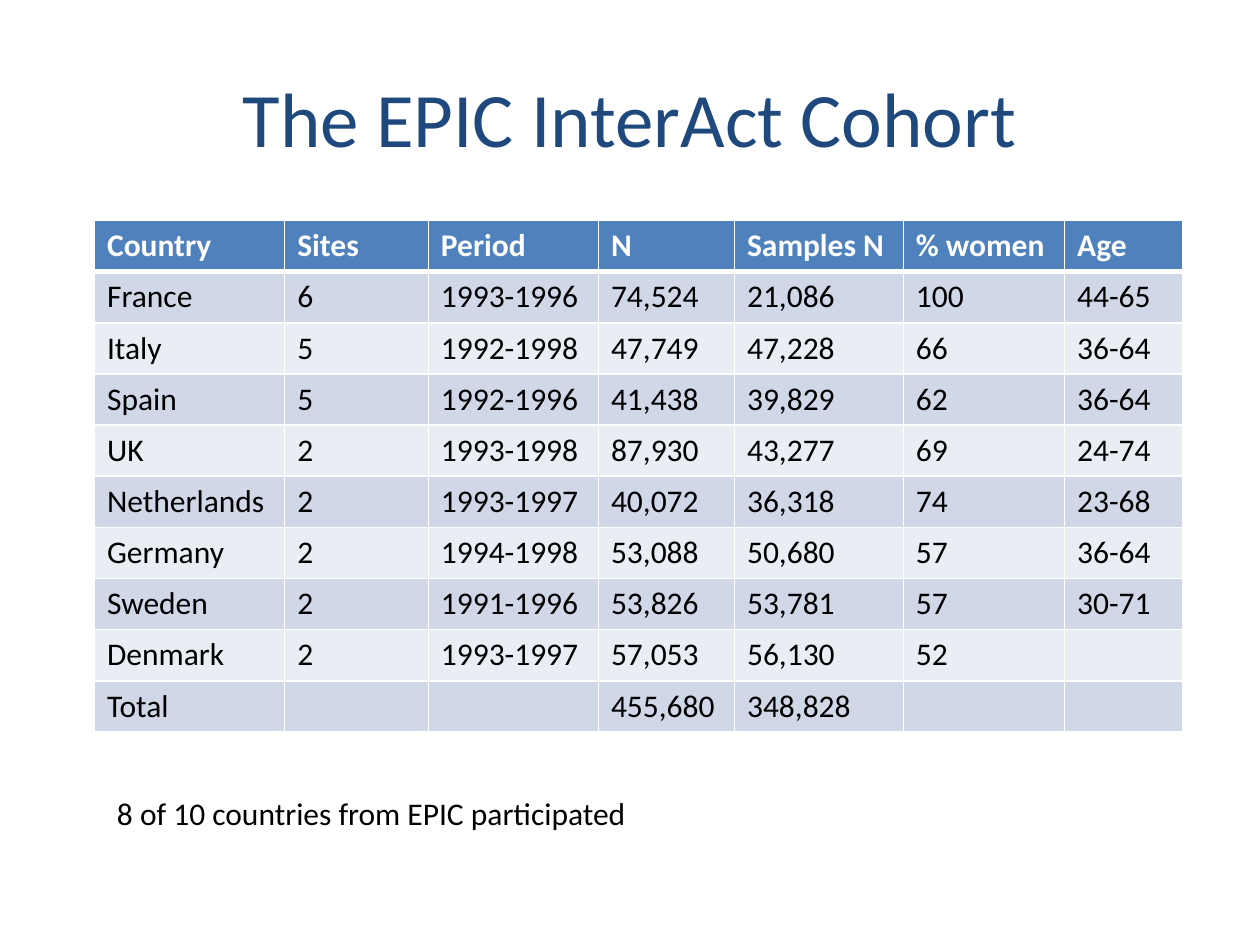
from dataclasses import dataclass

import lxml.etree
import pptx
import pptx.dml.color
import pptx.enum.text
import pptx.oxml.ns
import pptx.util

Inches = pptx.util.Inches
RGBColor = pptx.dml.color.RGBColor

FONT = "Calibri"
NAVY = RGBColor(0x1F, 0x49, 0x7D)
BLUE = RGBColor(0x4F, 0x81, 0xBD)
BAND_DARK = RGBColor(0xD0, 0xD8, 0xE8)
BAND_LIGHT = RGBColor(0xE9, 0xED, 0xF4)
WHITE = RGBColor(0xFF, 0xFF, 0xFF)
BLACK = RGBColor(0x00, 0x00, 0x00)
ROW_HEIGHT = 0.406


@dataclass(frozen=True)
class Column:
    heading: str
    width: float


@dataclass(frozen=True)
class Label:
    text: str
    left: float
    top: float
    width: float
    height: float
    size: int
    color: RGBColor
    align: pptx.enum.text.PP_ALIGN
    anchor: pptx.enum.text.MSO_ANCHOR
    wrap: bool


COLUMNS = (
    Column("Country", 1.51),
    Column("Sites", 1.14),
    Column("Period", 1.35),
    Column("N", 1.08),
    Column("Samples N", 1.34),
    Column("% women", 1.28),
    Column("Age", 0.94),
)
COHORTS = (
    ("France", "6", "1993-1996", "74,524", "21,086", "100", "44-65"),
    ("Italy", "5", "1992-1998", "47,749", "47,228", "66", "36-64"),
    ("Spain", "5", "1992-1996", "41,438", "39,829", "62", "36-64"),
    ("UK", "2", "1993-1998", "87,930", "43,277", "69", "24-74"),
    ("Netherlands", "2", "1993-1997", "40,072", "36,318", "74", "23-68"),
    ("Germany", "2", "1994-1998", "53,088", "50,680", "57", "36-64"),
    ("Sweden", "2", "1991-1996", "53,826", "53,781", "57", "30-71"),
    ("Denmark", "2", "1993-1997", "57,053", "56,130", "52", ""),
    ("Total", "", "", "455,680", "348,828", "", ""),
)
LABELS = (
    Label("The EPIC InterAct Cohort", 0.5, 0.3, 9, 1.25, 44, NAVY,
          pptx.enum.text.PP_ALIGN.CENTER, pptx.enum.text.MSO_ANCHOR.MIDDLE, True),
    Label("8 of 10 countries from EPIC participated", 0.83, 6.25, 4.29, 0.4, 18, BLACK,
          pptx.enum.text.PP_ALIGN.LEFT, pptx.enum.text.MSO_ANCHOR.TOP, False),
)


def format_runs(p, size: int, color: RGBColor, bold: bool = False) -> None:
    for r in p.runs:
        r.font.name = FONT
        r.font.size = pptx.util.Pt(size)
        r.font.bold = bold
        r.font.color.rgb = color


def add_label(slide, label: Label) -> None:
    sp = slide.shapes.add_textbox(Inches(label.left), Inches(label.top),
                                  Inches(label.width), Inches(label.height))
    tf = sp.text_frame
    tf.word_wrap = label.wrap
    tf.vertical_anchor = label.anchor
    tf.text = label.text
    p = tf.paragraphs[0]
    p.alignment = label.align
    format_runs(p, label.size, label.color)


def set_border(cell, side: str, width: int) -> None:
    qn = pptx.oxml.ns.qn
    ln = lxml.etree.SubElement(cell._tc.get_or_add_tcPr(), qn(f"a:ln{side}"),
                               w=str(pptx.util.Pt(width)))
    fill = lxml.etree.SubElement(ln, qn("a:solidFill"))
    lxml.etree.SubElement(fill, qn("a:srgbClr"), val=str(WHITE))


def fill_cell(cell, text: str, row: int) -> None:
    header = row == 0
    widths = {"L": 1, "R": 1, "T": 3 if row == 1 else 1, "B": 3 if header else 1}
    for side, width in widths.items():
        set_border(cell, side, width)
    cell.fill.solid()
    cell.fill.fore_color.rgb = BLUE if header else BAND_DARK if row % 2 else BAND_LIGHT
    cell.text_frame.text = text
    format_runs(cell.text_frame.paragraphs[0], 18, WHITE if header else BLACK, header)


def add_cohort_table(slide, left: float, top: float) -> None:
    rows = (tuple(column.heading for column in COLUMNS), *COHORTS)
    width = sum(column.width for column in COLUMNS)
    table = slide.shapes.add_table(len(rows), len(COLUMNS), Inches(left), Inches(top),
                                   Inches(width), Inches(ROW_HEIGHT * len(rows))).table
    for i, column in enumerate(COLUMNS):
        table.columns[i].width = Inches(column.width)
    for i, values in enumerate(rows):
        table.rows[i].height = Inches(ROW_HEIGHT)
        for j, value in enumerate(values):
            fill_cell(table.cell(i, j), value, i)


def main() -> None:
    """Build the cohort overview slide."""
    prs = pptx.Presentation()
    prs.slide_width = Inches(10)
    prs.slide_height = Inches(7.5)
    s = prs.slides.add_slide(prs.slide_layouts[6])
    add_cohort_table(s, 0.75, 1.75)
    for label in LABELS:
        add_label(s, label)
    prs.save("out.pptx")


if __name__ == "__main__":
    main()
